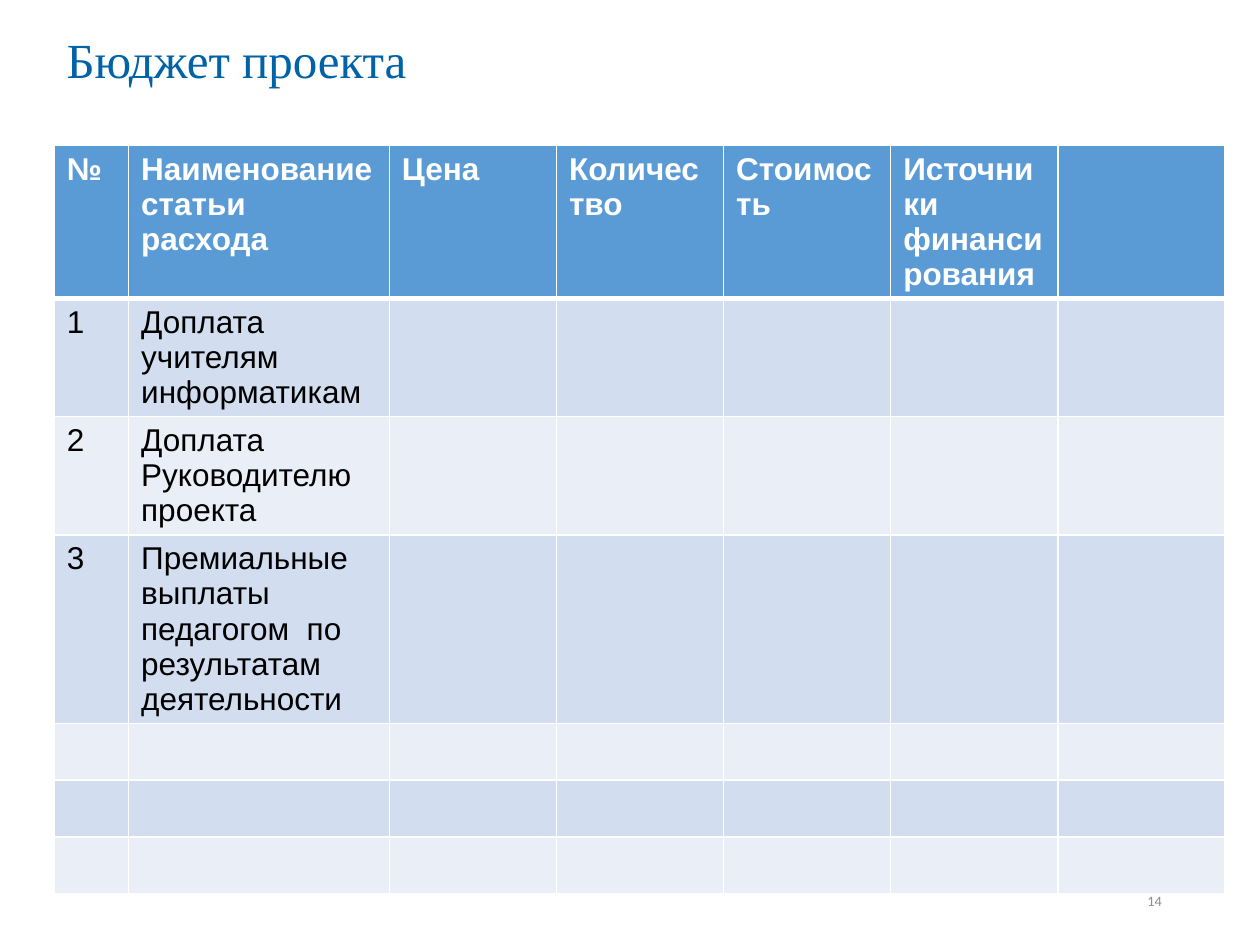
from lxml.etree import SubElement
from pptx import Presentation
from pptx.dml.color import RGBColor
from pptx.enum.text import MSO_ANCHOR, PP_ALIGN
from pptx.oxml.ns import qn
from pptx.util import Pt

WHITE = "FFFFFF"
HEAD = ["№", "Наименование статьи расхода", "Цена", "Количество",
        "Стоимость", "Источники финансирования", ""]
ITEMS = ["Доплата учителям информатикам", "Доплата Руководителю проекта",
         "Премиальные выплаты педагогом  по результатам деятельности"]
WIDTHS = [42.5, 149] + [95.5] * 5
HEIGHTS = [62] + [32.4] * 6
BANDS = ["EAEFF7", "D2DEEF"]


def color(code):
    """Turn a hex string into a colour."""
    return RGBColor.from_string(code)


def write(frame, text, ink, para, **font):
    """Put one styled paragraph into a text frame."""
    line = frame.paragraphs[0]
    for name, value in para.items():
        setattr(line, name, value)
    run = line.add_run()
    run.text = text
    for name, value in font.items():
        setattr(run.font, name, value)
    run.font.color.rgb = color(ink)


def label(slide, box, text, ink, para, **font):
    """Place a vertically centred text box."""
    frame = slide.shapes.add_textbox(*map(Pt, box)).text_frame
    frame.word_wrap = True
    frame.vertical_anchor = MSO_ANCHOR.MIDDLE
    write(frame, text, ink, para, **font)


def border(cell, sides):
    """Draw white cell borders from a dict of side to width."""
    props = cell._tc.get_or_add_tcPr()
    for side, width in sides.items():
        line = SubElement(props, qn(f"a:ln{side}"), w=str(Pt(width)))
        fill = SubElement(line, qn("a:solidFill"))
        SubElement(fill, qn("a:srgbClr"), val=WHITE)


def budget(slide, left, top):
    """Build the budget table with its corner at the given point."""
    rows = [HEAD] + [[str(n), item] for n, item in enumerate(ITEMS, 1)]
    box = (left, top, sum(WIDTHS), sum(HEIGHTS))
    table = slide.shapes.add_table(len(HEIGHTS), len(WIDTHS), *map(Pt, box)).table
    for col, width in zip(table.columns, WIDTHS):
        col.width = Pt(width)
    for r, height in enumerate(HEIGHTS):
        table.rows[r].height = Pt(height)
        texts = rows[r] if r < len(rows) else []
        for c in range(len(WIDTHS)):
            cell = table.cell(r, c)
            border(cell, {"L": 1, "R": 1, "T": 3 if r == 1 else 1, "B": 1 if r else 3})
            cell.fill.solid()
            cell.fill.fore_color.rgb = color(BANDS[r % 2] if r else "5B9BD5")
            if c < len(texts) and texts[c]:
                write(cell.text_frame, texts[c], "000000" if r else WHITE,
                      {"line_spacing": Pt(20.1)},
                      name="Arial", size=Pt(18), bold=r == 0)


def main():
    """Build and save the slide."""
    deck = Presentation()
    deck.slide_width, deck.slide_height = Pt(720), Pt(540)
    slide = deck.slides.add_slide(deck.slide_layouts[6])
    label(slide, (31, 0, 306.7, 71.3), "Бюджет проекта", "0062A7",
          {"line_spacing": 0.9}, name="Times New Roman", size=Pt(28))
    budget(slide, 31, 83)
    label(slide, (509, 500.4, 162, 28.8), "14", "8C8C8C",
          {"alignment": PP_ALIGN.RIGHT}, name="Calibri", size=Pt(8.2))
    deck.save("out.pptx")


if __name__ == "__main__":
    main()
